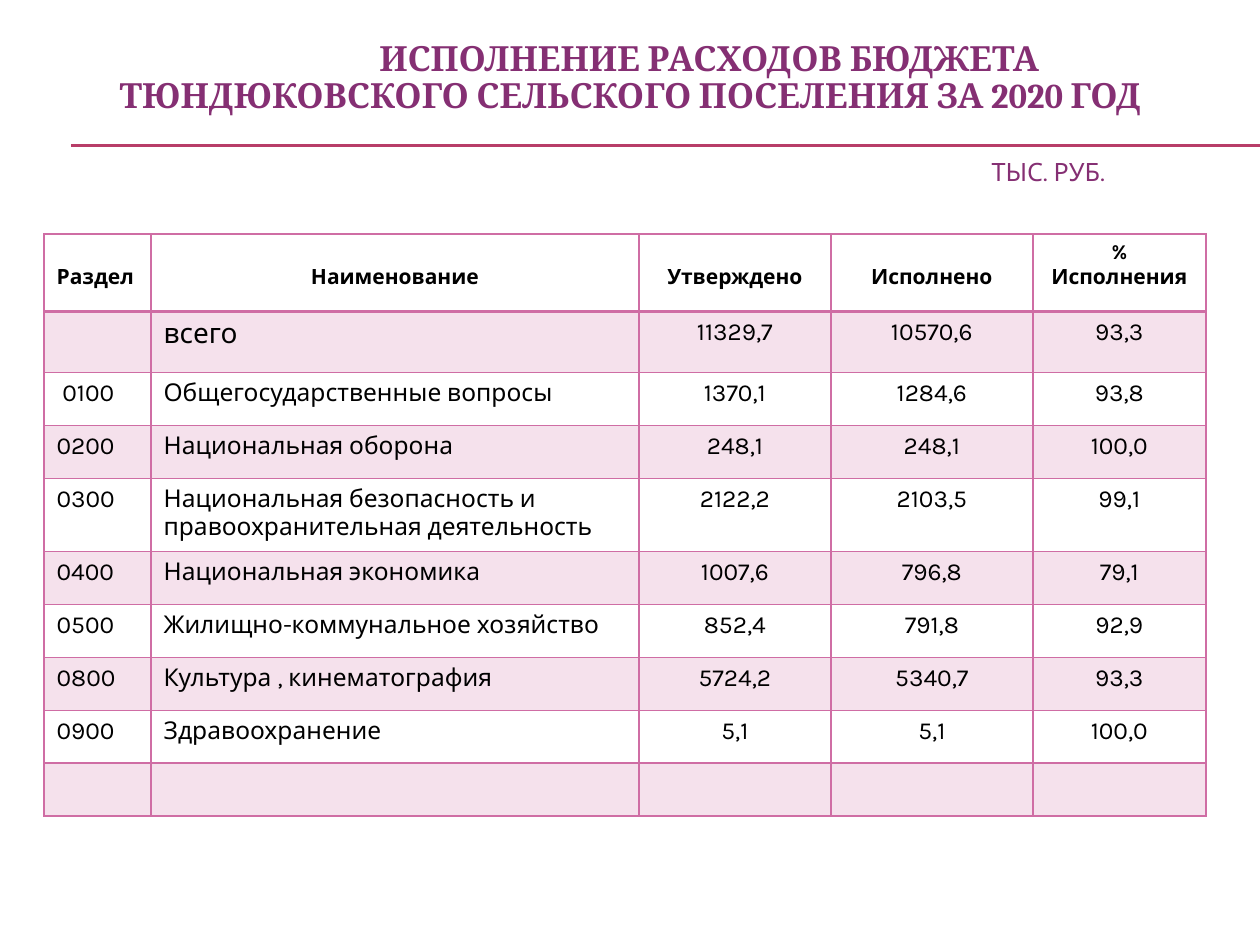
"""Build the budget expenditure slide with its execution table."""
from dataclasses import dataclass

from lxml.etree import SubElement
from pptx import Presentation
from pptx.dml.color import RGBColor
from pptx.enum.shapes import MSO_CONNECTOR
from pptx.enum.text import MSO_ANCHOR, MSO_AUTO_SIZE, PP_ALIGN
from pptx.oxml import parse_xml
from pptx.oxml.ns import qn
from pptx.util import Pt

PX = 914400 // 126


@dataclass(frozen=True)
class Theme:
    title_font: str = "Cambria"
    body_font: str = "Karla"
    heading: str = "852F73"
    rule: str = "B83D68"
    table: str = "CF6DA4"
    text: str = "000000"
    band_alpha: int = 20000
    title_size: float = 19.8
    unit_size: float = 14.4
    header_size: int = 12
    total_size: int = 16
    cell_size: int = 14


THEME = Theme()
TITLE_LINES = [
    ("ИСПОЛНЕНИЕ РАСХОДОВ БЮДЖЕТА", THEME.title_font, THEME.title_size, True, PP_ALIGN.CENTER, 158),
    ("ТЮНДЮКОВСКОГО СЕЛЬСКОГО ПОСЕЛЕНИЯ ЗА 2020 ГОД", THEME.title_font, THEME.title_size, True,
     PP_ALIGN.CENTER, 0),
    ("ТЫС. РУБ.", THEME.body_font, THEME.unit_size, False, PP_ALIGN.LEFT, 915),
]
BUDGET = [
    ("Раздел", "Наименование", "Утверждено", "Исполнено", "% Исполнения"),
    ("", "всего", "11329,7", "10570,6", "93,3"),
    (" 0100", "Общегосударственные вопросы", "1370,1", "1284,6", "93,8"),
    ("0200", "Национальная оборона", "248,1", "248,1", "100,0"),
    ("0300", "Национальная безопасность и правоохранительная деятельность",
     "2122,2", "2103,5", "99,1"),
    ("0400", "Национальная экономика", "1007,6", "796,8", "79,1"),
    ("0500", "Жилищно-коммунальное хозяйство", "852,4", "791,8", "92,9"),
    ("0800", "Культура , кинематография", "5724,2", "5340,7", "93,3"),
    ("0900", "Здравоохранение", "5,1", "5,1", "100,0"),
    ("", "", "", "", ""),
]
COLUMN_WIDTHS = [107, 488, 192, 202, 173]
ROW_HEIGHTS = [77, 61, 53, 53, 73] + [53] * 5
TABLE_LEFT, TABLE_TOP = 44, 234
RULES = [145, 146]
NS = 'xmlns:a="http://schemas.openxmlformats.org/drawingml/2006/main"'


def format_runs(paragraph, font, size, color, bold):
    for run in paragraph.runs:
        run.font.name = font
        run.font.size = Pt(size)
        run.font.color.rgb = RGBColor.from_string(color)
        run.font.bold = bold


def add_rule(slide, y):
    rule = slide.shapes.add_connector(MSO_CONNECTOR.STRAIGHT, 71 * PX, y * PX, 1260 * PX, y * PX)
    rule.line.color.rgb = RGBColor.from_string(THEME.rule)
    rule.line.width = Pt(0.75)
    SubElement(rule.element.spPr, qn("a:effectLst"))


def fill_title(title):
    title.left, title.top, title.width, title.height = (n * PX for n in (64, 55, 1132, 118))
    frame = title.text_frame
    frame.auto_size = MSO_AUTO_SIZE.NONE
    frame.word_wrap = True
    frame.vertical_anchor = MSO_ANCHOR.MIDDLE
    frame.text = "\n".join(line[0] for line in TITLE_LINES)
    for paragraph, (_, font, size, bold, align, indent) in zip(frame.paragraphs, TITLE_LINES):
        paragraph.alignment = align
        paragraph.line_spacing = 0.9
        paragraph.space_before = Pt(0)
        paragraph._p.get_or_add_pPr().set("marL", str(indent * PX))
        format_runs(paragraph, font, size, THEME.heading, bold)
    frame.paragraphs[-1].space_before = Pt(25)


def set_borders(cell, row):
    widths = {"L": 1, "R": 1, "T": 2 if row == 1 else 1, "B": 2 if row == 0 else 1}
    properties = cell._tc.get_or_add_tcPr()
    for position, (side, width) in enumerate(widths.items()):
        properties.insert(position, parse_xml(
            f'<a:ln{side} {NS} w="{Pt(width)}"><a:solidFill>'
            f'<a:srgbClr val="{THEME.table}"/></a:solidFill></a:ln{side}>'))


def fill_cell(cell, text, row, column):
    header = row == 0
    if row % 2:
        cell.fill.solid()
        cell.fill.fore_color.rgb = RGBColor.from_string(THEME.table)
        tint = cell._tc.tcPr.find(".//" + qn("a:srgbClr"))
        SubElement(tint, qn("a:alpha"), val=str(THEME.band_alpha))
    else:
        cell.fill.background()
    set_borders(cell, row)
    if header:
        cell.vertical_anchor = MSO_ANCHOR.BOTTOM
        cell.margin_bottom = 22 * PX
    if not text:
        return
    cell.text_frame.text = text
    paragraph = cell.text_frame.paragraphs[0]
    centred = column > 1 or (header and column == 1)
    paragraph.alignment = PP_ALIGN.CENTER if centred else PP_ALIGN.LEFT
    size = THEME.header_size if header else THEME.cell_size
    if (row, column) == (1, 1):
        size = THEME.total_size
    format_runs(paragraph, THEME.body_font, size, THEME.text, header)


def add_budget(slide):
    table = slide.shapes.add_table(
        len(BUDGET), len(COLUMN_WIDTHS), TABLE_LEFT * PX, TABLE_TOP * PX,
        sum(COLUMN_WIDTHS) * PX, sum(ROW_HEIGHTS) * PX).table
    for column, width in zip(table.columns, COLUMN_WIDTHS):
        column.width = width * PX
    for row, (entries, height) in enumerate(zip(BUDGET, ROW_HEIGHTS)):
        table.rows[row].height = height * PX
        for column, text in enumerate(entries):
            fill_cell(table.cell(row, column), text, row, column)


def main():
    presentation = Presentation()
    presentation.slide_width, presentation.slide_height = 1260 * PX, 945 * PX
    slide = presentation.slides.add_slide(presentation.slide_layouts[5])
    for y in RULES:
        add_rule(slide, y)
    fill_title(slide.shapes.title)
    add_budget(slide)
    presentation.save("out.pptx")


if __name__ == "__main__":
    main()
